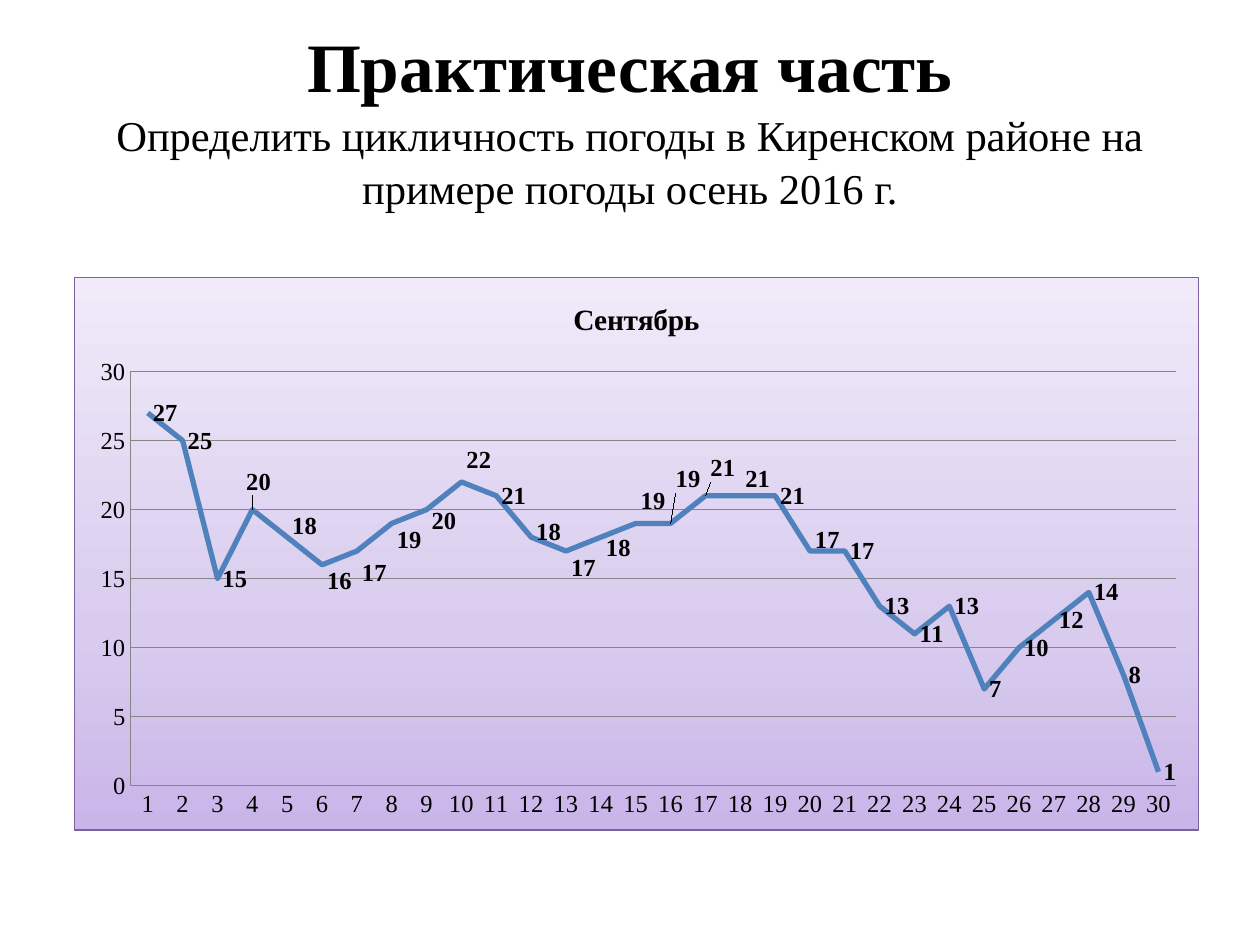
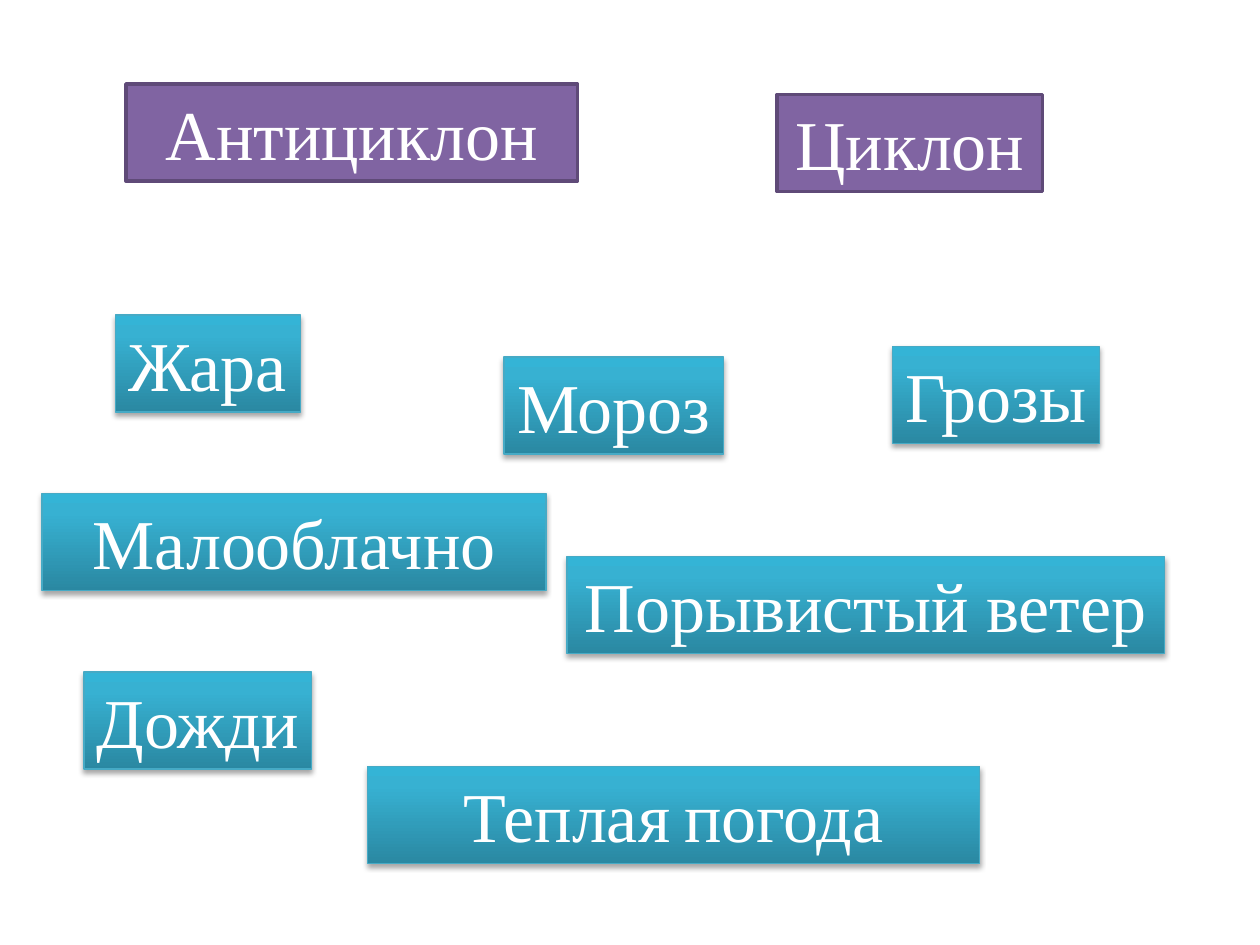
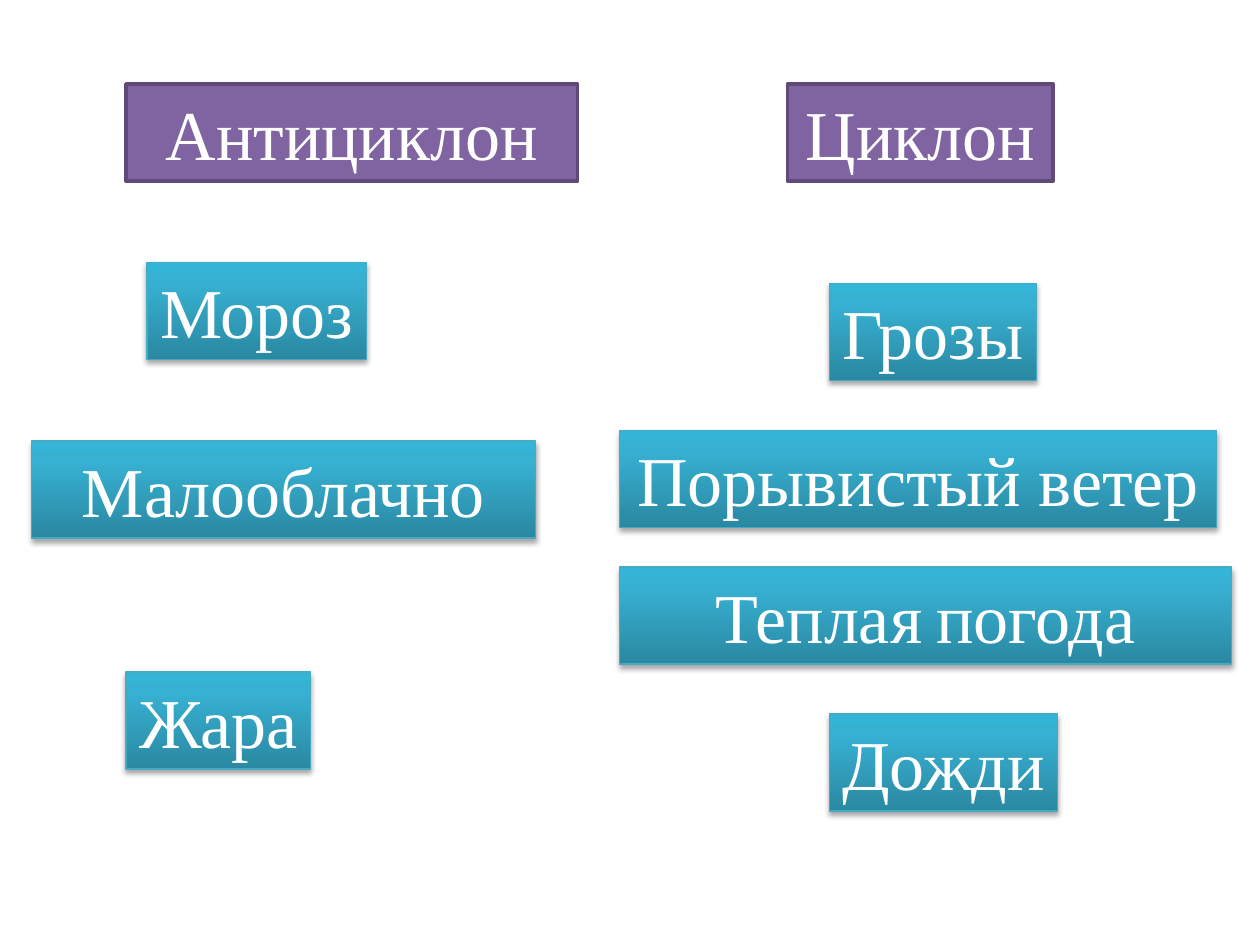
from lxml import etree
from pptx import Presentation
from pptx.chart.data import CategoryChartData
from pptx.dml.color import RGBColor
from pptx.enum.chart import XL_CHART_TYPE, XL_LABEL_POSITION, XL_TICK_MARK
from pptx.enum.shapes import MSO_SHAPE
from pptx.enum.text import MSO_ANCHOR, MSO_AUTO_SIZE, PP_ALIGN
from pptx.oxml import parse_xml
from pptx.oxml.ns import nsdecls, qn
from pptx.util import Inches, Pt

LINE = XL_CHART_TYPE.LINE
RIGHT = XL_LABEL_POSITION.RIGHT
NO_TICK = XL_TICK_MARK.NONE
RECT = MSO_SHAPE.RECTANGLE
CENTER = PP_ALIGN.CENTER
MIDDLE, TOP = MSO_ANCHOR.MIDDLE, MSO_ANCHOR.TOP
FIT_SHAPE, NO_FIT = MSO_AUTO_SIZE.SHAPE_TO_FIT_TEXT, MSO_AUTO_SIZE.NONE

FONT = "Times New Roman"
COLORS = {
    "text": "000000", "light": "FFFFFF", "grid": "868686", "series": "4F81BD",
    "kind": "8064A2", "kind_line": "5F4A78", "sign_line": "46AAC5",
    "chart_line": "7D60A0",
}
SIGN_STOPS = [(0, "2A88A2"), (80, "37B1D2"), (100, "34B4D6")]
CHART_STOPS = [(0, "C9B5E8"), (35, "D8CBEE"), (100, "F0EAF9")]

UNITS_PER_INCH = 12
BOX_HEIGHT = 9.24
TIGHT_WIDTH = 24
BOX_WIDTHS = {
    "Антициклон": 43, "Циклон": 25.3, "Дожди": 21.7, "Порывистый ветер": 56.9,
    "Теплая погода": 58.3, "Жара": 17.6, "Мороз": 20.9, "Грозы": 19.7,
    "Малооблачно": 48,
}
GAP_SIZES = {"Теплая погода": 32}

SEPTEMBER = [27, 25, 15, 20, 18, 16, 17, 19, 20, 22, 21, 18, 17, 18, 19,
             19, 21, 21, 21, 17, 17, 13, 11, 13, 7, 10, 12, 14, 8, 1]
LABEL_SHIFTS = {
    3: (-0.01, -0.05), 4: (0, -0.02), 5: (0, 0.03), 6: (0, 0.04),
    7: (0, 0.03), 8: (0, 0.02), 9: (0, -0.04), 11: (0, -0.01),
    12: (0, 0.03), 13: (0, 0.02), 14: (0, -0.04), 15: (0, -0.08),
    16: (0, -0.05), 17: (0, -0.03), 19: (0, -0.02),
}

MIXED = {
    "kinds": [("Антициклон", 12, 8), ("Циклон", 74, 9)],
    "signs": [("Дожди", 8, 64), ("Порывистый ветер", 54, 53),
              ("Теплая погода", 35, 73), ("Жара", 11, 30), ("Мороз", 48, 34),
              ("Грозы", 85, 33), ("Малооблачно", 4, 47)],
}
SORTED = {
    "kinds": [("Антициклон", 12, 8), ("Циклон", 75, 8)],
    "signs": [("Жара", 12, 64), ("Мороз", 14, 25), ("Грозы", 79, 27),
              ("Малооблачно", 3, 42), ("Порывистый ветер", 59, 41),
              ("Дожди", 79, 68), ("Теплая погода", 59, 54)],
}


def rgb(name):
    """Return the palette colour with this name."""
    return RGBColor.from_string(COLORS[name])


def grid(*units):
    """Turn grid units into lengths."""
    return [Inches(unit / UNITS_PER_INCH) for unit in units]


def apply(target, **values):
    """Set each named attribute on the target."""
    for name, value in values.items():
        setattr(target, name, value)


def style_font(font, size, color="text", bold=False):
    """Give a font the deck's typeface, a size and a colour."""
    apply(font, name=FONT, size=Pt(size), bold=bold)
    font.color.rgb = rgb(color)


def style_line(line, color, width):
    """Colour a line and set its width in points."""
    line.color.rgb = rgb(color)
    line.width = Pt(width)


def gradient_xml(stops):
    """Return a gradient fill that rises from the bottom edge."""
    marks = "".join(
        f'<a:gs pos="{share * 1000}"><a:srgbClr val="{color}"/></a:gs>'
        for share, color in stops)
    return (f'<a:gradFill {nsdecls("a")} rotWithShape="1"><a:gsLst>{marks}</a:gsLst>'
            '<a:lin ang="16200000" scaled="0"/></a:gradFill>')


def manual_layout(**values):
    """Return a chart layout element made of the given settings."""
    settings = "".join(f'<c:{key} val="{value}"/>' for key, value in values.items())
    return parse_xml(f'<c:layout {nsdecls("c")}><c:manualLayout>{settings}'
                     '</c:manualLayout></c:layout>')


def add_heading(slide, headline, task):
    """Fill the title with a bold headline and the task below it."""
    title = slide.shapes.title
    left, top, width, height = grid(6, 3.6, 108, 15)
    apply(title, left=left, top=top, width=width, height=height)
    apply(title.text_frame, word_wrap=True, auto_size=NO_FIT, vertical_anchor=MIDDLE)
    paragraph = title.text_frame.paragraphs[0]
    apply(paragraph, alignment=CENTER, line_spacing=1.04)
    for text, size, bold in ((headline, 39.6, True), (task, 24.3, False)):
        run = paragraph.add_run()
        run.text = text
        style_font(run.font, size, bold=bold)
        if bold:
            paragraph.add_line_break()


def paint_chart_area(chart):
    """Give the chart a gradient ground, a border and a fixed plot area."""
    space = chart._chartSpace
    ground = parse_xml(
        f'<c:spPr {nsdecls("c", "a")}>{gradient_xml(CHART_STOPS)}'
        f'<a:ln w="{Pt(0.75)}"><a:solidFill><a:srgbClr val="{COLORS["chart_line"]}"/>'
        '</a:solidFill></a:ln></c:spPr>')
    space.find(qn("c:chart")).addnext(ground)
    plot_area = space.find(".//" + qn("c:plotArea"))
    for layout in plot_area.findall(qn("c:layout")):
        plot_area.remove(layout)
    plot_area.insert(0, manual_layout(
        layoutTarget="inner", xMode="edge", yMode="edge", x=0.05, y=0.17, w=0.93, h=0.75))


def label_points(series):
    """Show bold values, some shifted away from the line."""
    labels = series.data_labels
    apply(labels, show_value=True, position=RIGHT)
    style_font(labels.font, 14, bold=True)
    for index in LABEL_SHIFTS:
        label = series.points[index].data_label
        label.position = RIGHT
        style_font(label.font, 14, bold=True)
    for label in series._element.iter(qn("c:dLbl")):
        position = label.find(qn("c:idx"))
        x, y = LABEL_SHIFTS[int(position.get("val"))]
        position.addnext(manual_layout(x=x, y=y))


def add_temperature_chart(slide, month, temperatures):
    """Draw the daily temperatures of a month as a line."""
    data = CategoryChartData()
    data.categories = [str(day) for day in range(1, len(temperatures) + 1)]
    data.add_series("Series 1", temperatures)
    chart = slide.shapes.add_chart(LINE, *grid(7, 26.4, 107.2, 52.7), data).chart
    chart.has_legend = False
    style_font(chart.font, 14)
    chart.has_title = True
    chart.chart_title.include_in_layout = False
    heading = chart.chart_title.text_frame
    heading.text = month
    style_font(heading.paragraphs[0].runs[0].font, 16.8, bold=True)
    for axis in (chart.category_axis, chart.value_axis):
        apply(axis, major_tick_mark=NO_TICK, minor_tick_mark=NO_TICK)
        style_line(axis.format.line, "grid", 0.75)
    apply(chart.value_axis, has_major_gridlines=True, minimum_scale=0,
          maximum_scale=30, major_unit=5)
    style_line(chart.value_axis.major_gridlines.format.line, "grid", 0.75)
    chart.plots[0].vary_by_categories = False
    series = chart.plots[0].series[0]
    series.smooth = False
    style_line(series.format.line, "series", 3)
    label_points(series)
    paint_chart_area(chart)


def add_box(slide, label, column, row):
    """Add a rectangle as wide as its label needs."""
    width = BOX_WIDTHS[label]
    box = slide.shapes.add_shape(RECT, *grid(column, row, width, BOX_HEIGHT))
    box.shadow.inherit = False
    apply(box.text_frame, word_wrap=width > TIGHT_WIDTH, auto_size=FIT_SHAPE,
          vertical_anchor=TOP)
    paragraph = box.text_frame.paragraphs[0]
    paragraph.alignment = CENTER
    gap_size = GAP_SIZES.get(label)
    pieces = label.partition(" ") if gap_size else [label]
    for piece in pieces:
        run = paragraph.add_run()
        run.text = piece
        style_font(run.font, gap_size if piece == " " else 40, "light")
    return box


def add_kind(slide, label, column, row):
    """Add a purple box that names a kind of weather system."""
    box = add_box(slide, label, column, row)
    box.fill.solid()
    box.fill.fore_color.rgb = rgb("kind")
    style_line(box.line, "kind_line", 2)


def add_sign(slide, label, column, row):
    """Add a shaded blue box that names a sign of the weather."""
    box = add_box(slide, label, column, row)
    properties = box._element.spPr
    properties.find(qn("a:prstGeom")).addnext(parse_xml(gradient_xml(SIGN_STOPS)))
    style_line(box.line, "sign_line", 0.75)
    shadow = etree.SubElement(
        properties.find(qn("a:effectLst")), qn("a:outerShdw"),
        blurRad=str(Pt(3.1)), dist=str(Pt(1.8)), dir="5400000", rotWithShape="0")
    tint = etree.SubElement(shadow, qn("a:srgbClr"), val=COLORS["text"])
    etree.SubElement(tint, qn("a:alpha"), val="35000")


def add_sorting_slide(deck, places):
    """Add a slide with the two kinds and their signs."""
    slide = deck.slides.add_slide(deck.slide_layouts[6])
    for place in places["kinds"]:
        add_kind(slide, *place)
    for place in places["signs"]:
        add_sign(slide, *place)


def main():
    """Build the deck and save it."""
    deck = Presentation()
    apply(deck, slide_width=Inches(10), slide_height=Inches(7.5))
    practice = deck.slides.add_slide(deck.slide_layouts[5])
    add_heading(practice, "Практическая часть",
                "Определить цикличность погоды в Киренском районе на примере "
                "погоды осень 2016 г.")
    add_temperature_chart(practice, "Сентябрь", SEPTEMBER)
    for places in (MIXED, SORTED):
        add_sorting_slide(deck, places)
    deck.save("out.pptx")


if __name__ == "__main__":
    main()
